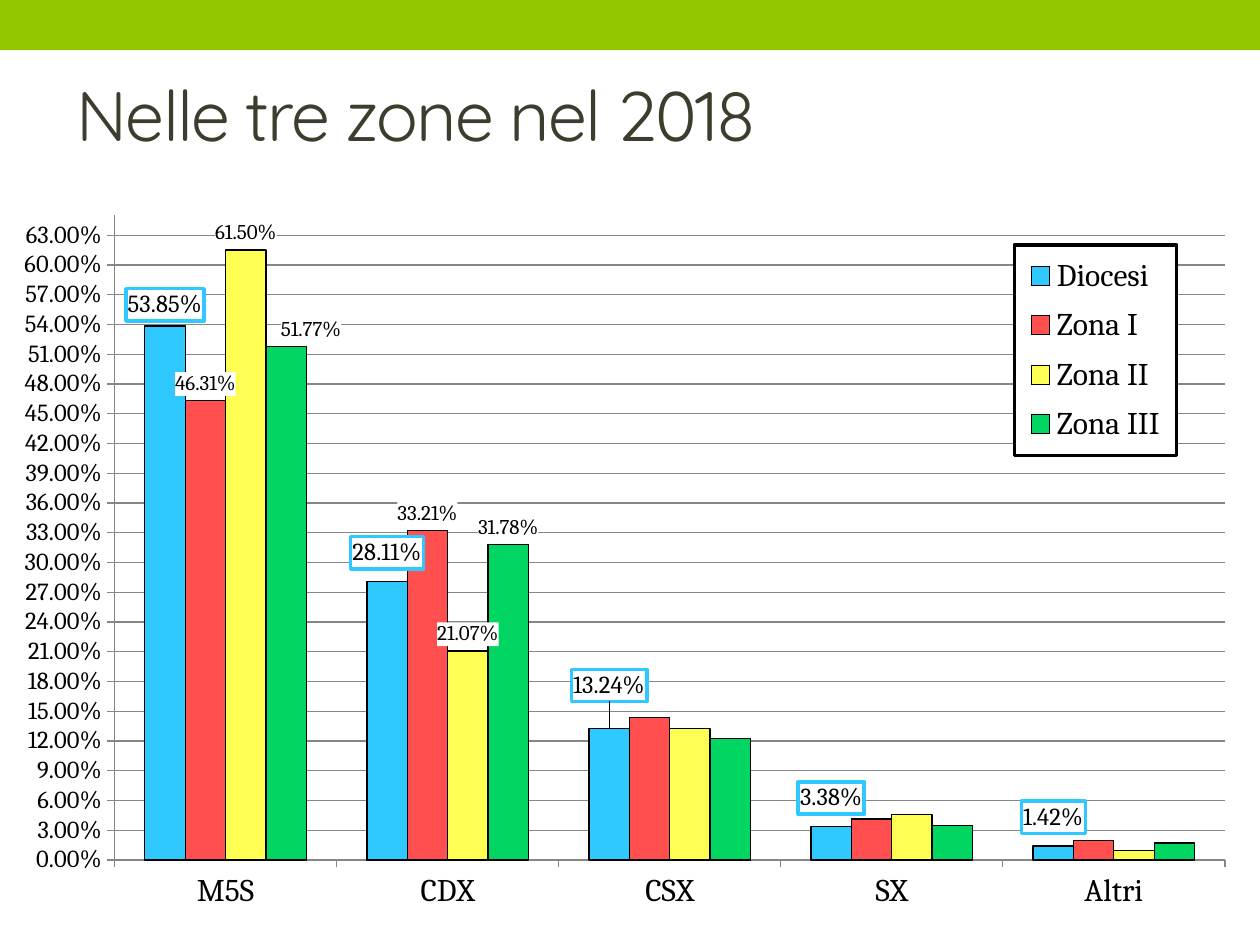
from dataclasses import dataclass

import lxml.etree
import pptx
import pptx.chart.data
import pptx.dml.color
import pptx.enum.chart
import pptx.enum.shapes
import pptx.enum.text
import pptx.oxml
import pptx.oxml.ns
import pptx.util


@dataclass(frozen=True)
class Theme:
    band: str = "94C600"
    title: str = "3E3D2D"
    ink: str = "000000"
    paper: str = "FFFFFF"
    grid: str = "868686"
    title_font: str = "Quicksand"
    chart_font: str = "Cambria"
    title_size: int = 40
    chart_size: int = 18
    axis_size: int = 14
    zone_label_size: int = 12


THEME = Theme()
WIDTH, HEIGHT = pptx.util.Inches(10), pptx.util.Inches(7.5)
PERCENT = "0.00%"
PARTIES = ["M5S", "CDX", "CSX", "SX", "Altri"]
# Name, colour, shares by party, and label offsets by labelled party (shares of the chart)
SERIES = [
    ("Diocesi", "2FC9FF", [0.5385, 0.2811, 0.1324, 0.0338, 0.0142],
     [(0, 0), (0, -0.01), (0, -0.03), (0, -0.01), (0, -0.01)]),
    ("Zona I", "FF4F4F", [0.4631, 0.3321, 0.1438, 0.0413, 0.0198], [(0, 0), (0, 0)]),
    ("Zona II", "FFFF53", [0.6150, 0.2107, 0.1328, 0.0455, 0.0096], [(0, 0), (0, 0)]),
    ("Zona III", "00D661", [0.5177, 0.3178, 0.1221, 0.0347, 0.0172], [(0.02, 0), (0, 0)]),
]


def rgb(value):
    return pptx.dml.color.RGBColor.from_string(value)


def area(left, top, width, height):
    """Turn shares of the slide into a position and a size."""
    return [int(left * WIDTH), int(top * HEIGHT), int(width * WIDTH), int(height * HEIGHT)]


def set_font(font, name, size, color):
    font.name, font.size = name, pptx.util.Pt(size)
    font.color.rgb = rgb(color)


def set_line(line, color, width):
    line.color.rgb = rgb(color)
    line.width = pptx.util.Pt(width)


def manual_layout(x, y, width=None, height=None, inner=False):
    """Make a chart layout; without a size, x and y are offsets."""
    fields = {"layoutTarget": "inner"} if inner else {}
    if width is not None:
        fields.update(xMode="edge", yMode="edge")
    fields.update(x=x, y=y)
    if width is not None:
        fields.update(w=width, h=height)
    layout = pptx.oxml.parse_xml(f'<c:layout {pptx.oxml.ns.nsdecls("c")}/>')
    manual = lxml.etree.SubElement(layout, pptx.oxml.ns.qn("c:manualLayout"))
    for name, value in fields.items():
        lxml.etree.SubElement(manual, pptx.oxml.ns.qn(f"c:{name}")).set("val", str(value))
    return layout


def frame(border=None, width=2):
    """Make white chart-part properties, with an optional border."""
    line = "<a:ln><a:noFill/></a:ln>"
    if border:
        line = (f'<a:ln w="{pptx.util.Pt(width)}"><a:solidFill>'
                f'<a:srgbClr val="{border}"/></a:solidFill></a:ln>')
    return pptx.oxml.parse_xml(
        f'<c:spPr {pptx.oxml.ns.nsdecls("c", "a")}><a:solidFill>'
        f'<a:srgbClr val="{THEME.paper}"/></a:solidFill>{line}</c:spPr>')


def decorate(element, anchor, layout, properties):
    """Place a layout after the anchor and properties before the text format."""
    for old in element.findall(pptx.oxml.ns.qn("c:layout")):
        element.remove(old)
    element.find(pptx.oxml.ns.qn(anchor)).addnext(layout)
    element.find(pptx.oxml.ns.qn("c:txPr")).addprevious(properties)


def add_band(slide):
    band = slide.shapes.add_shape(
        pptx.enum.shapes.MSO_SHAPE.RECTANGLE, *area(0, 0, 1, 0.053))
    band.shadow.inherit = False
    band.fill.solid()
    band.fill.fore_color.rgb = rgb(THEME.band)
    band.line.fill.background()


def set_title(slide, text):
    title = slide.shapes.title
    title.left, title.top, title.width, title.height = area(0.051, 0.048, 0.9, 0.144)
    title.text_frame.vertical_anchor = pptx.enum.text.MSO_ANCHOR.MIDDLE
    para = title.text_frame.paragraphs[0]
    para.alignment = pptx.enum.text.PP_ALIGN.LEFT
    span = para.add_run()
    span.text = text
    set_font(span.font, THEME.title_font, THEME.title_size, THEME.title)
    span.font._element.set("spc", "-100")


def format_axes(chart):
    values, categories = chart.value_axis, chart.category_axis
    values.minimum_scale, values.maximum_scale, values.major_unit = 0, 0.65, 0.03
    values.tick_labels.number_format = PERCENT
    values.tick_labels.number_format_is_linked = False
    values.has_major_gridlines = True
    set_line(values.major_gridlines.format.line, THEME.grid, 0.75)
    for axis, size in ((values, THEME.axis_size), (categories, THEME.chart_size)):
        axis.major_tick_mark = pptx.enum.chart.XL_TICK_MARK.OUTSIDE
        set_line(axis.format.line, THEME.grid, 0.75)
        set_font(axis.tick_labels.font, THEME.chart_font, size, THEME.ink)


def format_series(series, color, offsets, size, border):
    series.format.fill.solid()
    series.format.fill.fore_color.rgb = rgb(color)
    set_line(series.format.line, THEME.ink, 0.75)
    series.data_labels.show_value = False
    for index, offset in enumerate(offsets):
        label = series.points[index].data_label
        set_font(label.font, THEME.chart_font, size, THEME.ink)
        label.position = pptx.enum.chart.XL_LABEL_POSITION.OUTSIDE_END
        element = series.data_labels._element.findall(pptx.oxml.ns.qn("c:dLbl"))[index]
        decorate(element, "c:idx", manual_layout(*offset), frame(border))


def add_legend(chart):
    chart.has_legend = True
    legend = chart.legend
    legend.position = pptx.enum.chart.XL_LEGEND_POSITION.RIGHT
    legend.include_in_layout = True
    set_font(legend.font, THEME.chart_font, THEME.chart_size, THEME.ink)
    decorate(legend._element, "c:legendPos",
             manual_layout(0.815, 0.067, 0.13, 0.287), frame(THEME.ink))


def add_vote_chart(slide):
    data = pptx.chart.data.CategoryChartData(number_format=PERCENT)
    data.categories = PARTIES
    for name, _, shares, _ in SERIES:
        data.add_series(name, shares)
    chart = slide.shapes.add_chart(
        pptx.enum.chart.XL_CHART_TYPE.COLUMN_CLUSTERED,
        *area(0, 0.207, 0.988, 0.777), data).chart
    chart.has_title = False
    set_font(chart.font, THEME.chart_font, THEME.chart_size, THEME.ink)
    plot = chart.plots[0]
    plot.gap_width, plot.overlap, plot.vary_by_categories = 150, 0, False
    format_axes(chart)
    for series, (name, color, _, offsets) in zip(plot.series, SERIES):
        total = name == "Diocesi"
        format_series(series, color, offsets,
                      THEME.axis_size if total else THEME.zone_label_size,
                      color if total else None)
    add_legend(chart)
    plot_area = chart._chartSpace.chart.plotArea
    for old in plot_area.findall(pptx.oxml.ns.qn("c:layout")):
        plot_area.remove(old)
    plot_area.insert(0, manual_layout(0.092, 0.027, 0.892, 0.878, inner=True))


def main():
    deck = pptx.Presentation()
    deck.slide_width, deck.slide_height = WIDTH, HEIGHT
    page = deck.slides.add_slide(deck.slide_layouts.get_by_name("Title Only"))
    add_band(page)
    set_title(page, "Nelle tre zone nel 2018")
    add_vote_chart(page)
    deck.save("out.pptx")


if __name__ == "__main__":
    main()
